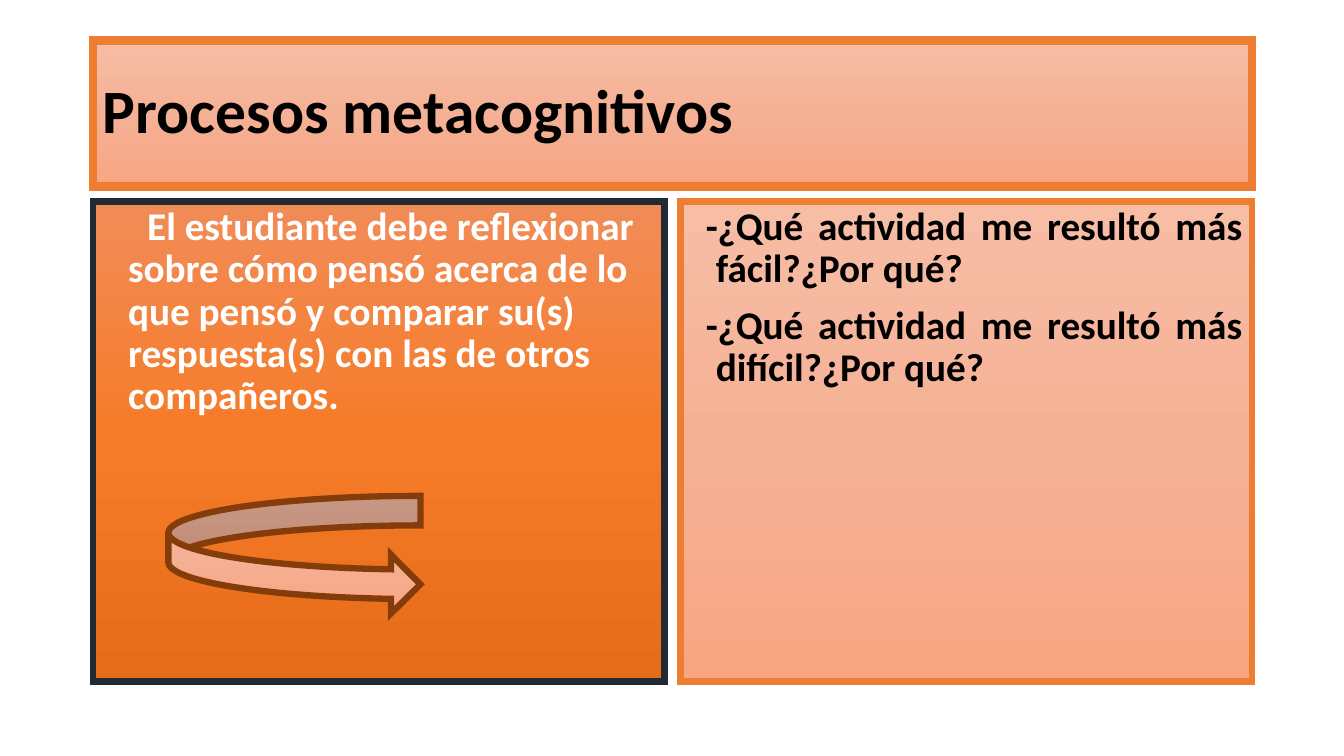
from copy import deepcopy

from lxml.etree import SubElement
from pptx import Presentation
from pptx.dml.color import RGBColor
from pptx.enum.shapes import MSO_SHAPE as Shape
from pptx.enum.text import MSO_ANCHOR as Anchor, MSO_AUTO_SIZE as AutoSize, PP_ALIGN as Align
from pptx.oxml.ns import qn
from pptx.util import Inches, Pt

PEACH = ("F7BDA5", "F5B196", "F8A582")
ORANGE = ("F18C57", "F67B28", "E56C19")
ACCENT, NAVY, BROWN = "ED7D31", "222A35", "843C0B"
BLACK, WHITE = "000000", "FFFFFF"
TWO_CONTENT = 3


def color(value):
    return RGBColor.from_string(value)


def place(shape, box):
    shape.left, shape.top, shape.width, shape.height = map(Inches, box)


def paint(shape, gradient, line, line_width):
    """Fill with an even top-to-bottom gradient and a mitred outline."""
    shape.fill.gradient()
    shape.fill.gradient_angle = 270
    stop_list = shape._element.spPr.find(qn("a:gradFill")).find(qn("a:gsLst"))
    stop_list.append(deepcopy(stop_list[-1]))
    for index, stop in enumerate(shape.fill.gradient_stops):
        stop.position = index / (len(gradient) - 1)
        stop.color.rgb = color(gradient[index])
    shape.line.color.rgb = color(line)
    shape.line.width = Pt(line_width)
    SubElement(shape.line._get_or_add_ln(), qn("a:miter"), lim="800000")
    shape.shadow.inherit = False


def write(shape, paragraphs, size, font_color, anchor=Anchor.TOP, align=Align.LEFT,
          margin=0, indent=0, space_before=0):
    frame = shape.text_frame
    frame.word_wrap = True
    frame.auto_size = AutoSize.NONE
    frame.vertical_anchor = anchor
    frame.text = "\n".join(paragraphs)
    for paragraph in frame.paragraphs:
        paragraph.alignment = align
        paragraph.line_spacing = 0.9
        paragraph.space_before = Pt(space_before)
        properties = paragraph._p.get_or_add_pPr()
        properties.set("marL", str(Inches(margin)))
        properties.set("indent", str(Inches(indent)))
        SubElement(properties, qn("a:buNone"))
        font = paragraph.runs[0].font
        font.name, font.size, font.bold = "Calibri", Pt(size), True
        font.color.rgb = color(font_color)


def build_title(title, box):
    place(title, box)
    paint(title, PEACH, ACCENT, 6)
    write(title, ["Procesos metacognitivos"], 44, BLACK, anchor=Anchor.MIDDLE)


def build_panel(body, box, paragraphs, gradient, line, font_color, **text_format):
    place(body, box)
    paint(body, gradient, line, 4.5)
    write(body, paragraphs, 28, font_color, margin=0.25, space_before=10, **text_format)


def build_arrow(slide, panel_box):
    left, top, _, _ = panel_box
    box = (left + 0.75, top + 2.92, 2.5, 1.17)
    arrow = slide.shapes.add_shape(Shape.CURVED_RIGHT_ARROW, *map(Inches, box))
    paint(arrow, PEACH, BROWN, 4.5)


def main():
    presentation = Presentation()
    presentation.slide_width, presentation.slide_height = Inches(13.33), Inches(7.5)
    slide = presentation.slides.add_slide(presentation.slide_layouts[TWO_CONTENT])
    title, left_body, right_body = list(slide.placeholders)[:3]
    left_box, right_box = [(left, 2, 5.67, 4.76) for left in (0.92, 6.75)]

    build_title(title, (0.92, 0.4, 11.5, 1.45))
    build_panel(left_body, left_box,
                ["El estudiante debe reflexionar sobre cómo pensó acerca de lo que pensó "
                 "y comparar su(s) respuesta(s) con las de otros compañeros."],
                ORANGE, NAVY, WHITE, indent=0.19)
    build_panel(right_body, right_box,
                [f"-¿Qué actividad me resultó más {level}?¿Por qué?"
                 for level in ("fácil", "difícil")],
                PEACH, ACCENT, BLACK, align=Align.JUSTIFY, indent=-0.1)
    for placeholder in list(slide.placeholders)[3:]:
        placeholder._element.getparent().remove(placeholder._element)
    build_arrow(slide, left_box)
    presentation.save("out.pptx")


if __name__ == "__main__":
    main()
